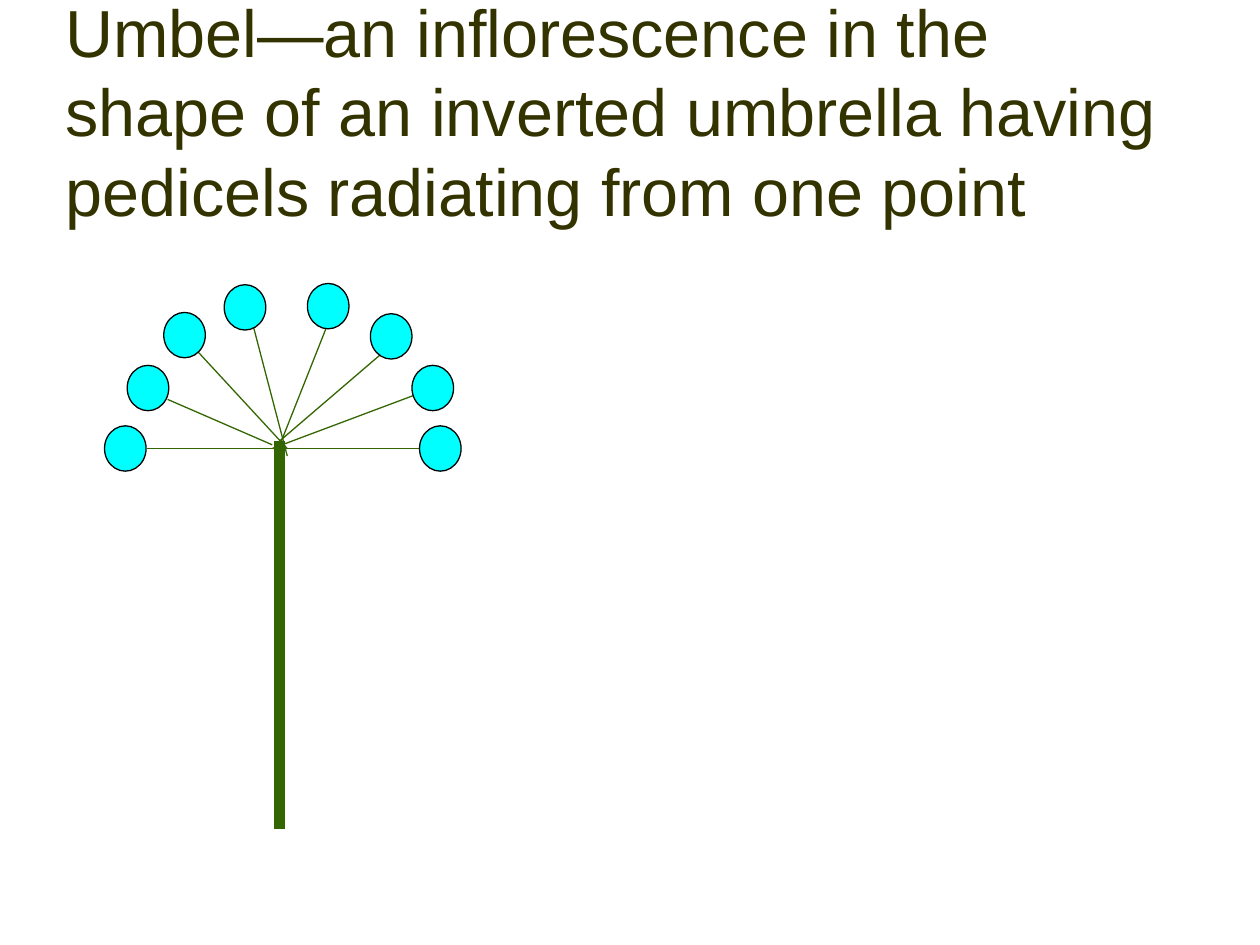
import pptx
import pptx.util
import pptx.dml.color
import pptx.enum.shapes
import pptx.enum.text
import pptx.oxml.ns
import lxml.etree

Inches = pptx.util.Inches
Pt = pptx.util.Pt
RGBColor = pptx.dml.color.RGBColor

OLIVE = RGBColor(0x33, 0x33, 0x00)
GREEN = RGBColor(0x33, 0x66, 0x00)
CYAN = RGBColor(0x00, 0xFF, 0xFF)
BLACK = RGBColor(0x00, 0x00, 0x00)

TITLE = ("Umbel—an inflorescence in the shape of an inverted umbrella "
         "having pedicels radiating from one point")

# Offsets in inches from the top left corner of the umbel
STEM = (1.39, 1.25, 1.39, 4.33)
STALKS = [
    (1.39, 1.25, 2.23, 0.53),
    (1.33, 1.31, 2.45, 0.89),
    (1.39, 1.31, 2.50, 1.31),
    (1.45, 1.37, 1.17, 0.30),
    (1.45, 1.31, 0.73, 0.53),
    (1.33, 1.28, 0.50, 0.92),
    (1.39, 1.31, 0.34, 1.31),
    (1.38, 1.31, 1.78, 0.30),
]
BLOOMS = [(0, 1.13), (0.18, 0.65), (0.47, 0.23), (0.95, 0.01),
          (1.61, 0), (2.11, 0.24), (2.44, 0.65), (2.50, 1.13)]
BLOOM_W, BLOOM_H = 0.33, 0.36


def add_title(slide, left, top, width, height):
    box = slide.shapes.add_textbox(
        Inches(left), Inches(top), Inches(width), Inches(height))
    frame = box.text_frame
    frame.word_wrap = True
    frame.vertical_anchor = pptx.enum.text.MSO_ANCHOR.MIDDLE
    run = frame.paragraphs[0].add_run()
    run.text = TITLE
    run.font.name = "Arial"
    run.font.size = Pt(38)
    run.font.color.rgb = OLIVE


def add_stalk(group, left, top, ends, weight):
    x1, y1, x2, y2 = ends
    stalk = group.shapes.add_connector(
        pptx.enum.shapes.MSO_CONNECTOR.STRAIGHT,
        Inches(left + x1), Inches(top + y1),
        Inches(left + x2), Inches(top + y2))
    stalk.line.color.rgb = GREEN
    stalk.line.width = Pt(weight)
    lxml.etree.SubElement(stalk._element.spPr,
                          pptx.oxml.ns.qn("a:effectLst"))


def add_bloom(group, left, top):
    bloom = group.shapes.add_shape(
        pptx.enum.shapes.MSO_SHAPE.OVAL, Inches(left), Inches(top),
        Inches(BLOOM_W), Inches(BLOOM_H))
    bloom.shadow.inherit = False
    bloom.fill.solid()
    bloom.fill.fore_color.rgb = CYAN
    bloom.line.color.rgb = BLACK
    bloom.line.width = Pt(0.75)


def add_umbel(slide, left, top):
    group = slide.shapes.add_group_shape()
    # Thick stem, then thin pedicels
    add_stalk(group, left, top, STEM, 6)
    for ends in STALKS:
        add_stalk(group, left, top, ends, 0.75)
    # Flowers at the tips
    for x, y in BLOOMS:
        add_bloom(group, left + x, top + y)


def main():
    deck = pptx.Presentation()
    deck.slide_width = Inches(10)
    deck.slide_height = Inches(7.5)
    slide = deck.slides.add_slide(deck.slide_layouts[6])
    add_title(slide, 0.42, 0.25, 9, 1.25)
    add_umbel(slide, 0.83, 2.25)
    deck.save("out.pptx")


if __name__ == "__main__":
    main()
